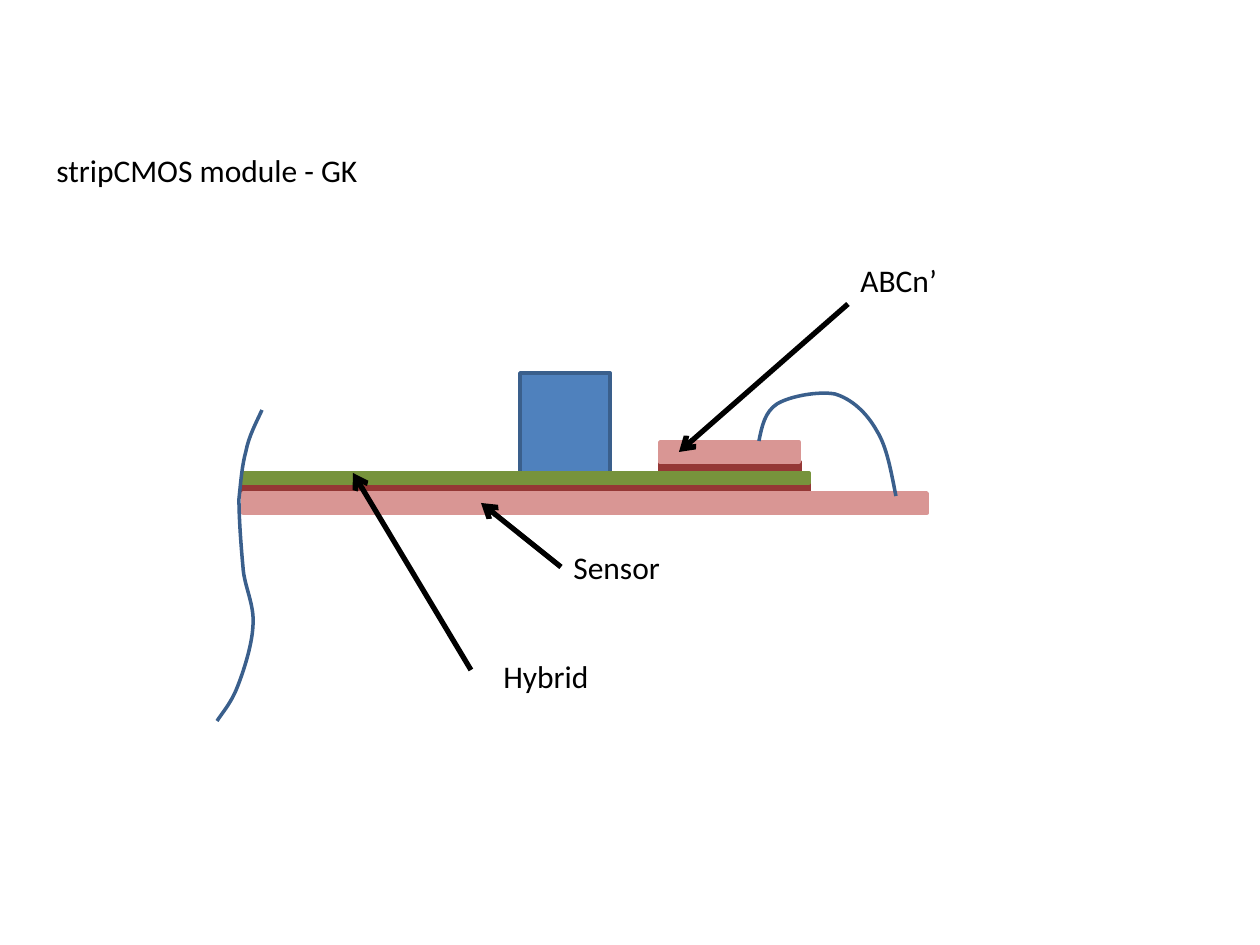
from lxml.etree import SubElement
from pptx import Presentation
from pptx.dml.color import RGBColor
from pptx.enum.shapes import MSO_CONNECTOR, MSO_SHAPE
from pptx.enum.text import MSO_AUTO_SIZE
from pptx.oxml.ns import qn
from pptx.util import Pt

SCALE = 914400 / 126  # EMU per px
COLORS = {
    "block": "4F81BD", "outline": "3A5F8C", "glue": "953735",
    "hybrid": "77933C", "silicon": "D99694", "ink": "000000",
}

# left, top, width, height, fill, line
LAYERS = [
    (520, 373, 90, 100, "block", "outline"),
    (660, 462, 140, 10, "glue", "glue"),
    (243, 483, 566, 10, "glue", "glue"),
    (243, 473, 566, 10, "hybrid", "hybrid"),
    (243, 493, 684, 20, "silicon", "silicon"),
    (660, 442, 139, 20, "silicon", "silicon"),
]
# start point, then two control points and an end point for each segment
BOND_WIRE = [
    (759, 441),
    (762, 426), (765, 412), (777, 404),
    (790, 396), (819, 391), (835, 394),
    (852, 399), (867, 413), (877, 431),
    (887, 447), (891, 471), (896, 496),
]
BREAK_LINE = [
    (262, 410),
    (256, 423), (249, 436), (246, 451),
    (242, 466), (241, 480), (239, 499),
    (239, 518), (241, 545), (243, 567),
    (244, 586), (255, 605), (253, 626),
    (252, 646), (243, 673), (237, 688),
    (231, 703), (223, 712), (217, 721),
]
ARROWS = [
    (471, 670, 353, 473),
    (561, 567, 481, 503),
    (848, 304, 679, 452),
]
LABEL_HEIGHT = 50
LABELS = [
    ("stripCMOS module - GK", 44, 145, 330),
    ("ABCn’", 848, 255, 102),
    ("Sensor", 561, 542, 113),
    ("Hybrid", 491, 651, 112),
]


def emu(*lengths):
    return [round(length * SCALE) for length in lengths]


def color(name):
    return RGBColor.from_string(COLORS[name])


def set_line(shape, name, points):
    shape.line.color.rgb = color(name)
    shape.line.width = Pt(points)


def add_layer(page, left, top, width, height, fill, line):
    layer = page.shapes.add_shape(MSO_SHAPE.RECTANGLE, *emu(left, top, width, height))
    layer.shadow.inherit = False
    layer.fill.solid()
    layer.fill.fore_color.rgb = color(fill)
    set_line(layer, line, 2)


def add_curve(page, points):
    """Draw a freeform, then turn each three line segments into one Bézier."""
    builder = page.shapes.build_freeform(*points[0], scale=SCALE)
    builder.add_line_segments(points[1:], close=False)
    curve = builder.convert_to_shape()
    curve.shadow.inherit = False
    curve.fill.background()
    set_line(curve, "outline", 2)
    outline = next(curve.element.iter(qn("a:path")))
    segments = outline.findall(qn("a:lnTo"))
    for start in range(0, len(segments), 3):
        bezier = SubElement(outline, qn("a:cubicBezTo"))
        for segment in segments[start:start + 3]:
            bezier.append(segment[0])
            outline.remove(segment)


def add_arrow(page, *ends):
    arrow = page.shapes.add_connector(MSO_CONNECTOR.STRAIGHT, *emu(*ends))
    set_line(arrow, "ink", 3)
    SubElement(arrow.line._get_or_add_ln(), qn("a:tailEnd"), type="arrow")
    SubElement(arrow.element.spPr, qn("a:effectLst"))


def add_label(page, text, left, top, width):
    box = page.shapes.add_textbox(*emu(left, top, width, LABEL_HEIGHT))
    frame = box.text_frame
    frame.word_wrap = False
    frame.auto_size = MSO_AUTO_SIZE.SHAPE_TO_FIT_TEXT
    span = frame.paragraphs[0].add_run()
    span.text = text
    for key, value in {"name": "Calibri", "size": Pt(18)}.items():
        setattr(span.font, key, value)
    span.font.color.rgb = color("ink")


def main():
    deck = Presentation()
    deck.slide_width, deck.slide_height = emu(1260, 945)
    page = deck.slides.add_slide(deck.slide_layouts[6])
    for layer in LAYERS:
        add_layer(page, *layer)
    for points in (BOND_WIRE, BREAK_LINE):
        add_curve(page, points)
    for arrow in ARROWS:
        add_arrow(page, *arrow)
    for label in LABELS:
        add_label(page, *label)
    deck.save("out.pptx")


if __name__ == "__main__":
    main()
